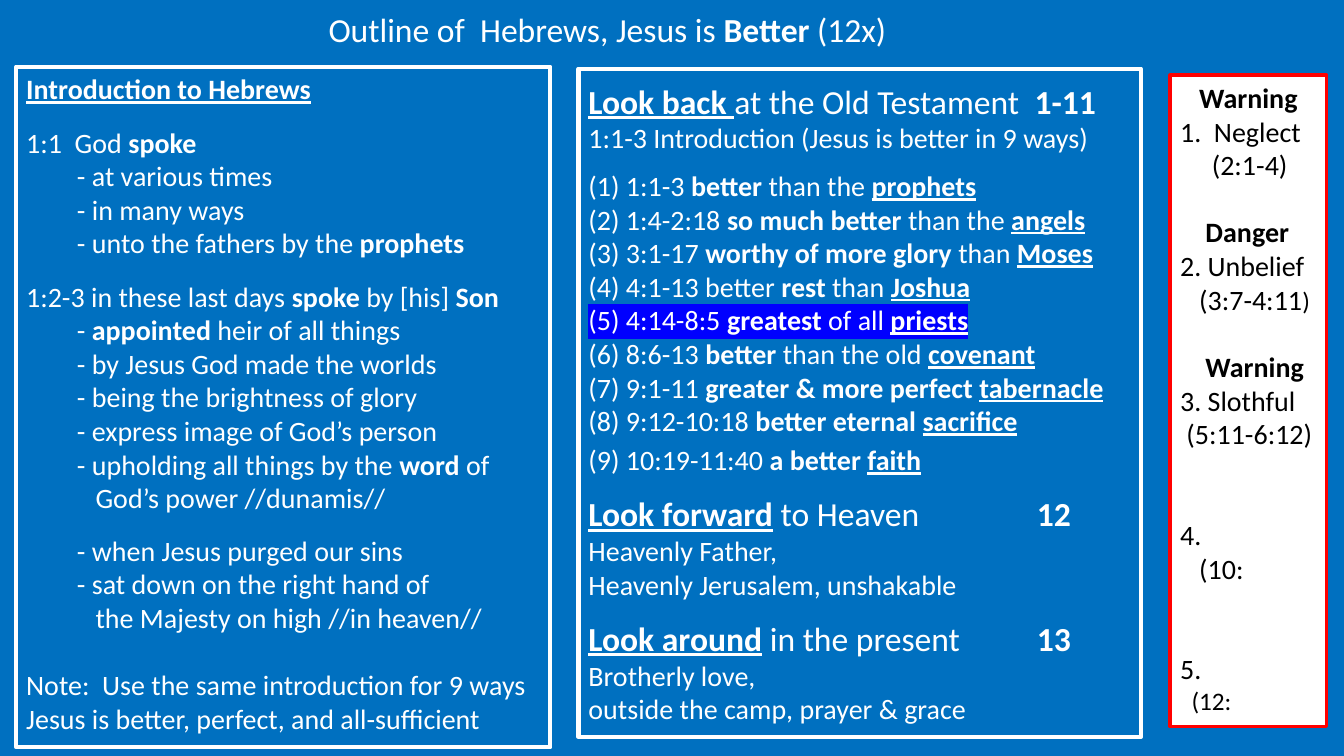
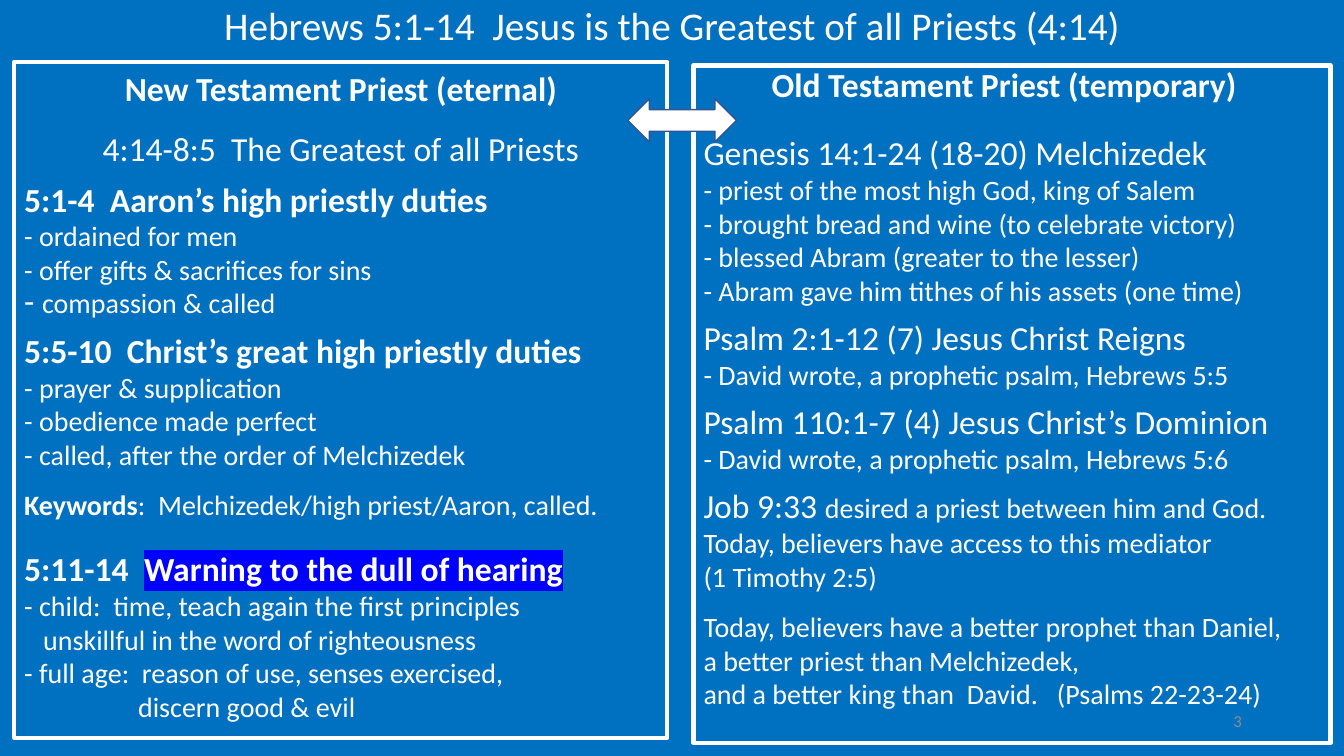
from dataclasses import dataclass

from lxml.etree import SubElement
from pptx import Presentation
from pptx.dml.color import RGBColor as Color
from pptx.enum.shapes import MSO_SHAPE as Shape
from pptx.enum.text import MSO_ANCHOR as Anchor, PP_ALIGN as Align
from pptx.oxml.ns import qn
from pptx.util import Cm, Pt


@dataclass(frozen=True)
class Theme:
    """Colours, font and type sizes shared by the slides."""

    font: str = "Calibri"
    background: str = "0070C0"
    light: str = "FFFFFF"
    dark: str = "000000"
    warning: str = "FF0000"
    highlight: str = "0000FF"
    arrow_line: str = "325491"
    muted: str = "8C8C8C"
    title: int = 28
    heading: int = 24
    body: int = 20
    small: int = 18
    number: int = 12
    border: float = 3


THEME = Theme()
HEAD = {"size": THEME.heading}
ITEM = {"indent": 1.28}
CONTINUED = {"indent": 1.75}
CHAPTER = {"size": THEME.heading, "gap": 12, "tab": 11.3}
FIXED = {"line": 24}
TOPIC = {"size": THEME.heading, "line": 24, "gap": 12}

INTRODUCTION = [
    ("*_Introduction to Hebrews", {}),
    ("1:1  God *spoke", {"gap": 14}),
    ("- at various times", ITEM),
    ("- in many ways", ITEM),
    ("- unto the fathers by the *prophets", ITEM),
    ("1:2-3 in these last days *spoke* by [his] *Son", {"gap": 14}),
    ("- *appointed* heir of all things", ITEM),
    ("- by Jesus God made the worlds", ITEM),
    ("- being the brightness of glory", ITEM),
    ("- express image of God’s person", ITEM),
    ("- upholding all things by the *word* of", ITEM),
    ("God’s power //dunamis//", CONTINUED),
    ("- when Jesus purged our sins", {**ITEM, "gap": 13.5}),
    ("- sat down on the right hand of", ITEM),
    ("the Majesty on high //in heaven//", CONTINUED),
    ("Note:  Use the same introduction for 9 ways Jesus is better, perfect, "
     "and all-sufficient", {"gap": 24}),
]

OUTLINE = [
    ("*_Look back _*at the Old Testament  *1-11", HEAD),
    ("1:1-3 Introduction (Jesus is better in 9 ways)", {}),
    ("(1) 1:1-3 *better* than the *_prophets", {"gap": 10}),
    ("(2) 1:4-2:18 *so much better* than the *_angels", {}),
    ("(3) 3:1-17 *worthy of more glory* than *_Moses", {}),
    ("(4) 4:1-13 better *rest* than *_Joshua", {}),
    ("^(5) 4:14-8:5 *greatest* of all *_priests", {}),
    ("(6) 8:6-13 *better* than the old *_covenant", {}),
    ("(7) 9:1-11 *greater & more perfect _tabernacle", {}),
    ("(8) 9:12-10:18 *better eternal _sacrifice", {}),
    ("(9) 10:19-11:40 *a better _faith", {"gap": 4}),
    ("*_Look forward_* to Heaven\t*12", CHAPTER),
    ("Heavenly Father,", {}),
    ("Heavenly Jerusalem, unshakable", {}),
    ("*_Look around_* in the present\t*13", CHAPTER),
    ("Brotherly love,", {}),
    ("outside the camp, prayer & grace", {}),
]

WARNINGS = [
    ("*Warning", {"indent": 0.48}),
    ("1.  Neglect", {}),
    ("(2:1-4)", {"indent": 0.8}),
    ("*Danger", {"indent": 0.64, "gap": 24}),
    ("2. Unbelief", {}),
    ("(3:7-4:11~)", {"indent": 0.48, "other_size": THEME.small}),
    ("*Warning", {"indent": 0.64, "gap": 24}),
    ("3. Slothful", {}),
    ("(5:11-6:12)", {"indent": 0.16}),
    ("4.", {"gap": 48}),
    ("(10:", {"indent": 0.48}),
    ("5.", {"gap": 48}),
    ("(12:", {"indent": 0.29, "size": THEME.small}),
]

NEW_PRIEST = [
    ("*New Testament Priest (eternal)", {**HEAD, "align": Align.CENTER}),
    ("4:14-8:5  The Greatest of all Priests",
     {**HEAD, "align": Align.CENTER, "gap": 14.6}),
    ("*5:1-4  Aaron’s high priestly duties", TOPIC),
    ("- ordained for men", FIXED),
    ("- offer gifts & sacrifices for sins", FIXED),
    ("~- ~compassion & called", {**FIXED, "other_size": THEME.heading}),
    ("*5:5-10  Christ’s great high priestly duties", TOPIC),
    ("- prayer & supplication", FIXED),
    ("- obedience made perfect", FIXED),
    ("- called, after the order of Melchizedek", FIXED),
    ("*Keywords*:  Melchizedek/high priest/Aaron, called.",
     {**FIXED, "gap": 12}),
    ("*5:11-14  ^Warning to the dull of hearing", {**TOPIC, "gap": 24}),
    ("- child:  time, teach again the first principles", FIXED),
    ("unskillful in the word of righteousness", {**FIXED, "indent": 0.48}),
    ("- full age:  reason of use, senses exercised,", FIXED),
    ("discern good & evil", {**FIXED, "indent": 2.87}),
]

OLD_PRIEST = [
    ("*Old Testament Priest (temporary)",
     {**HEAD, **FIXED, "align": Align.CENTER, "right": 0.4}),
    ("Genesis 14:1-24 (18-20) Melchizedek", {**TOPIC, "gap": 24.8}),
    ("- priest of the most high God, king of Salem", FIXED),
    ("- brought bread and wine (to celebrate victory)", FIXED),
    ("- blessed Abram (greater to the lesser)", FIXED),
    ("- Abram gave him tithes of his assets (one time)", FIXED),
    ("Psalm 2:1-12 (7) Jesus Christ Reigns", TOPIC),
    ("- David wrote, a prophetic psalm, Hebrews 5:5", FIXED),
    ("Psalm 110:1-7 (4) Jesus Christ’s Dominion", TOPIC),
    ("- David wrote, a prophetic psalm, Hebrews 5:6", FIXED),
    ("Job 9:33 ~desired a priest between him and God.",
     {**TOPIC, "other_size": THEME.body}),
    ("Today, believers have access to this mediator", FIXED),
    ("(1 Timothy 2:5)", FIXED),
    ("Today, believers have a better prophet than Daniel,",
     {**FIXED, "gap": 12}),
    ("a better priest than Melchizedek,", FIXED),
    ("and a better king than  David.   (Psalms 22-23-24)", FIXED),
]


def split_runs(text):
    """Yield text pieces with the marks (* bold, _ underline, ^ highlight, ~ size) in force."""
    marks, piece = set(), ""
    for letter in text:
        if letter in "*_^~":
            if piece:
                yield piece, frozenset(marks)
            marks ^= {letter}
            piece = ""
        else:
            piece += letter
    if piece:
        yield piece, frozenset(marks)


def write_line(paragraph, text, *, size=THEME.body, color=THEME.light, align=Align.LEFT,
               gap=0, line=None, indent=0, right=0, tab=None, other_size=None):
    """Write marked-up text into a paragraph."""
    paragraph.alignment = align
    paragraph.space_before = Pt(gap)
    if line:
        paragraph.line_spacing = Pt(line)
    properties = paragraph._p.get_or_add_pPr()
    properties.set("marL", str(Cm(indent)))
    properties.set("marR", str(Cm(right)))
    if tab:
        stops = SubElement(properties, qn("a:tabLst"))
        SubElement(stops, qn("a:tab"), pos=str(Cm(tab)), algn="l")
    for piece, marks in split_runs(text):
        run = paragraph.add_run()
        run.text = piece
        font = run.font
        font.name = THEME.font
        font.size = Pt(other_size if "~" in marks else size)
        font.bold = "*" in marks
        font.underline = "_" in marks
        font.color.rgb = Color.from_string(color)
        if "^" in marks:
            run_properties = run._r.get_or_add_rPr()
            highlight = SubElement(run_properties, qn("a:highlight"))
            SubElement(highlight, qn("a:srgbClr"), val=THEME.highlight)
            run_properties.find(qn("a:solidFill")).addnext(highlight)


def add_label(slide, box, text, anchor=Anchor.TOP, **formatting):
    """Add a one-line text box."""
    frame = slide.shapes.add_textbox(*map(Cm, box)).text_frame
    frame.word_wrap = True
    frame.vertical_anchor = anchor
    write_line(frame.paragraphs[0], text, **formatting)


def add_figure(slide, kind, box, line, width, fill=None):
    """Add a flat preset shape with an outline and an optional fill."""
    shape = slide.shapes.add_shape(kind, *map(Cm, box))
    shape.shadow.inherit = False
    shape.line.color.rgb = Color.from_string(line)
    shape.line.width = Pt(width)
    if fill:
        shape.fill.solid()
        shape.fill.fore_color.rgb = Color.from_string(fill)
    else:
        shape.fill.background()
    return shape


def add_panel(slide, box, lines, top=0.13, line=THEME.light, width=THEME.border,
              fill=None, color=THEME.light):
    """Add a bordered panel holding a list of formatted lines."""
    frame = add_figure(slide, Shape.RECTANGLE, box, line, width, fill).text_frame
    frame.word_wrap = True
    frame.vertical_anchor = Anchor.TOP
    frame.margin_top = Cm(top)
    for index, (text, formatting) in enumerate(lines):
        paragraph = frame.add_paragraph() if index else frame.paragraphs[0]
        write_line(paragraph, text, color=color, **formatting)


def add_slide(presentation):
    """Add a blank slide with the shared background."""
    slide = presentation.slides.add_slide(presentation.slide_layouts[6])
    slide.background.fill.solid()
    slide.background.fill.fore_color.rgb = Color.from_string(THEME.background)
    return slide


def build_outline(presentation):
    """Build the outline slide with its three panels."""
    slide = add_slide(presentation)
    add_label(slide, (8.03, 0.1, 15.16, 1.27),
              "Outline of  Hebrews, Jesus is *Better* (12x)", size=THEME.heading)
    add_panel(slide, (14.58, 1.73, 14.17, 16.84), OUTLINE, top=0.3)
    add_panel(slide, (0.41, 1.68, 13.46, 17.15), INTRODUCTION)
    add_panel(slide, (29.49, 1.9, 3.94, 16.41), WARNINGS, line=THEME.warning,
              width=2.75, fill=THEME.light, color=THEME.dark)


def build_comparison(presentation):
    """Build the slide that compares the two priests."""
    slide = add_slide(presentation)
    add_panel(slide, (0.36, 1.57, 16.46, 17.02), NEW_PRIEST)
    add_label(slide, (23.93, 17.65, 7.62, 1.02), "3", anchor=Anchor.MIDDLE,
              size=THEME.number, color=THEME.muted, align=Align.RIGHT)
    add_panel(slide, (17.48, 1.65, 16.05, 17.07), OLD_PRIEST)
    add_label(slide, (0.46, -0.08, 32.94, 1.45),
              "Hebrews 5:1-14  Jesus is the Greatest of all Priests (4:14)",
              size=THEME.title, align=Align.CENTER)
    add_figure(slide, Shape.LEFT_RIGHT_ARROW, (15.82, 2.49, 2.74, 1.09),
               THEME.arrow_line, 1, THEME.light)


def main():
    """Create and save the presentation."""
    presentation = Presentation()
    presentation.slide_width = Cm(33.87)
    presentation.slide_height = Cm(19.05)
    build_outline(presentation)
    build_comparison(presentation)
    presentation.save("out.pptx")


if __name__ == "__main__":
    main()
